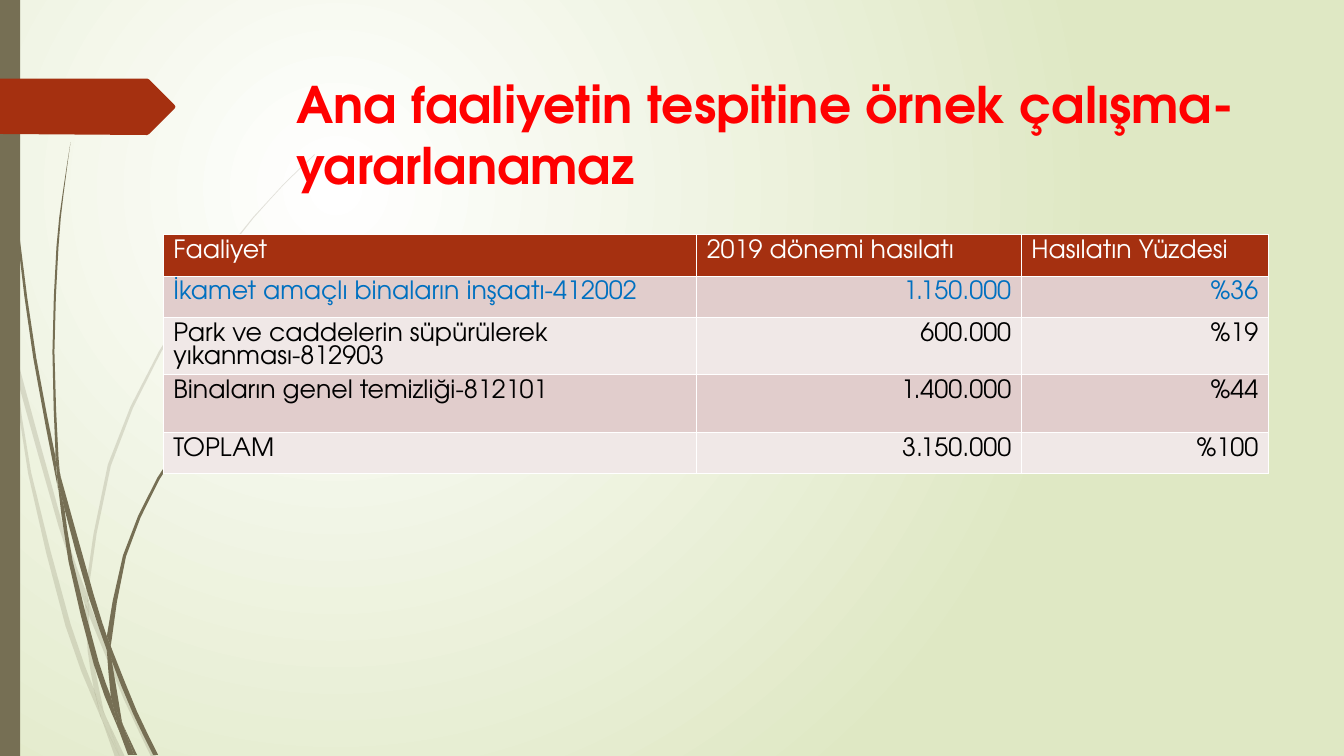
from lxml import etree
from pptx import Presentation
from pptx import util as u
from pptx.dml.color import RGBColor
from pptx.enum import shapes, text
from pptx.oxml.ns import qn

FONT = "TeX Gyre Adventor"
COLOURS = {
    "white": "FFFFFF", "meadow": "DFE8C4", "stem": "766F54", "rust": "A53010",
    "title": "FF0000", "blue": "0070C0", "black": "000000",
    "odd": "E1CDCC", "even": "F0E8E7",
}
COLUMNS = [5.29, 3.22, 2.45]
ROW_HEIGHTS = [0.41, 0.41, 0.57, 0.57, 0.41]
ROWS = [
    ["Faaliyet", "2019 dönemi hasılatı", "Hasılatın Yüzdesi"],
    ["İkamet amaçlı binaların inşaatı-412002", "1.150.000", "%36"],
    ["Park ve caddelerin süpürülerek yıkanması-812903", "600.000", "%19"],
    ["Binaların genel temizliği-812101", "1.400.000", "%44"],
    ["TOPLAM", "3.150.000", "%100"],
]
PALE_BLADES = [
    ([(0.11, 3.5), (0.09, 3.22), (0, 2.82)], [(0, 2.99), (0.1, 3.44), (0.11, 3.5)]),
    ([(0.14, 3.45), (0.62, 5.2), (0.85, 5.86)],
     [(0.84, 5.99), (0.58, 5.22), (0.17, 3.76)]),
    ([(0.88, 5.96), (0.92, 6.07), (1.27, 6.92), (1.55, 7.51)],
     [(1.5, 7.51), (1.23, 6.94), (0.88, 6.1)]),
    ([(1.05, 7.11), (1.24, 7.51)], [(1.19, 7.51), (1.05, 7.11)]),
    ([(0.11, 3.5), (0.17, 3.76), (0.31, 4.69), (0.7, 6.19), (0.93, 6.83),
      (0.99, 7.07), (1.01, 7.14)],
     [(0.92, 6.93), (0.65, 6.21), (0.28, 4.7), (0.11, 3.5)]),
    ([(0.84, 5.99), (0.87, 6.46), (0.93, 6.83), (0.96, 6.92), (1.05, 7.11)],
     [(1.03, 7.06), (0.91, 6.46), (0.88, 6.08), (0.84, 5.99)]),
    ([(0.88, 5.96), (0.88, 5.84), (1.1, 4.62), (1.6, 3.49), (2.29, 2.45),
      (2.68, 1.98), (2.9, 1.75), (3.12, 1.54)],
     [(3.12, 1.53), (2.89, 1.75), (2.68, 1.97), (2.28, 2.44), (1.58, 3.48),
      (1.07, 4.61), (0.85, 5.84)]),
    ([(1.01, 7.14), (1.14, 7.51)], [(1.19, 7.51), (1.01, 7.14)]),
    ([(0.88, 6.1), (0.88, 5.96), (0.85, 5.86)], [(0.84, 5.99), (0.88, 6.08)]),
    ([(0.93, 6.83), (0.99, 7.07), (1.01, 7.14), (1.19, 7.51)],
     [(1.19, 7.51), (1.05, 7.11), (0.96, 6.92), (0.93, 6.83)]),
]
DARK_BLADES = [
    ([(0.03, 0), (0.04, 0.48), (0.07, 1.1), (0.17, 2.33), (0.33, 3.55),
      (0.56, 4.77), (0.57, 4.81)],
     [(0.55, 4.53), (0.36, 3.55), (0.19, 2.32), (0.08, 1.09), (0.05, 0.48), (0.04, 0)]),
    ([(0.6, 4.72), (0.93, 5.9), (1.06, 6.31)],
     [(1.06, 6.45), (0.88, 5.92), (0.64, 5.05), (0.6, 4.72)]),
    ([(1.1, 6.41), (1.13, 6.49), (1.36, 7.06), (1.57, 7.49)],
     [(1.52, 7.49), (1.32, 7.08), (1.11, 6.56), (1.1, 6.41)]),
    ([(0.57, 4.77), (0.64, 5.05), (0.72, 5.56), (0.98, 6.57), (1.1, 6.91), (1.17, 7.22)],
     [(1.11, 7.08), (0.93, 6.59), (0.68, 5.57), (0.57, 4.77)]),
    ([(0.7, 1.41), (0.63, 1.93), (0.58, 2.45), (0.54, 3.49), (0.58, 4.53), (0.6, 4.72)],
     [(0.55, 4.49), (0.52, 3.49), (0.56, 2.45), (0.62, 1.93), (0.7, 1.41)]),
    ([(1.22, 7.19), (1.36, 7.49)], [(1.33, 7.49), (1.22, 7.19)]),
    ([(0.55, 4.49), (0.6, 4.72), (0.64, 5.05)], [(0.57, 4.77), (0.55, 4.53)]),
    ([(1.1, 6.41), (1.11, 6.33), (1.25, 5.52), (1.58, 4.76), (2.05, 4.06),
      (2.31, 3.74), (2.45, 3.59), (2.61, 3.44)],
     [(2.6, 3.44), (2.45, 3.58), (2.31, 3.73), (2.04, 4.05), (1.56, 4.74),
      (1.22, 5.51), (1.06, 6.31)]),
    ([(1.17, 7.22), (1.27, 7.49)], [(1.31, 7.49), (1.17, 7.22)]),
    ([(1.06, 6.45), (1.1, 6.91), (1.16, 7.06), (1.22, 7.19)],
     [(1.21, 7.16), (1.11, 6.56), (1.09, 6.51), (1.06, 6.45)]),
    ([(1.06, 6.31), (1.06, 6.45), (1.11, 6.56)], [(1.1, 6.41), (1.06, 6.31)]),
    ([(1.1, 6.91), (1.16, 7.17), (1.17, 7.22), (1.3, 7.49)],
     [(1.33, 7.49), (1.22, 7.19), (1.16, 7.06), (1.1, 6.91)]),
]
MARKER = [(0, 0.78), (1.46, 0.78), (1.48, 0.79), (1.73, 1.04), (1.74, 1.06),
          (1.73, 1.08), (1.48, 1.33), (1.46, 1.34), (0, 1.33)]


def rgb(name):
    return RGBColor.from_string(COLOURS[name])


def smooth(edge, steps=2):
    padded = [edge[0], *edge, edge[-1]]
    curve = [edge[0]]
    for before, start, end, after in zip(padded, padded[1:], padded[2:], padded[3:]):
        for step in range(1, steps + 1):
            t = step / steps
            curve.append(tuple(
                (2 * b + (c - a) * t + (2 * a - 5 * b + 4 * c - d) * t ** 2
                 + (3 * b - a - 3 * c + d) * t ** 3) / 2
                for a, b, c, d in zip(before, start, end, after)))
    return curve


def paint(figure, colour, alpha=None):
    figure.shadow.inherit = False
    figure.fill.solid()
    figure.fill.fore_color.rgb = rgb(colour)
    figure.line.fill.background()
    if alpha:
        tint = figure._element.spPr.find(".//" + qn("a:srgbClr"))
        etree.SubElement(tint, qn("a:alpha"), val=str(alpha * 1000))


def add_outline(slide, points, colour, alpha=None):
    start, *rest = [(u.Inches(x), u.Inches(y)) for x, y in points]
    builder = slide.shapes.build_freeform(*start)
    builder.add_line_segments(rest, close=True)
    paint(builder.convert_to_shape(), colour, alpha)


def add_background(slide):
    fill = slide.background.fill
    fill.gradient()
    for stop, colour in zip(fill.gradient_stops, ("white", "meadow")):
        stop.color.rgb = rgb(colour)
    gradient = slide._element.find(".//" + qn("a:gradFill"))
    gradient.remove(gradient.find(qn("a:lin")))
    circle = etree.SubElement(gradient, qn("a:path"), attrib={"path": "circle"})
    etree.SubElement(circle, qn("a:fillToRect"),
                     l="50000", t="50000", r="100000", b="100000")


def format_text(paragraph, size, colour, bold=False):
    for run in paragraph.runs:
        run.font.name = FONT
        run.font.size = u.Pt(size)
        run.font.bold = bold
        run.font.color.rgb = rgb(colour)


def add_title(slide, wording):
    title = slide.shapes.title
    slide.shapes._spTree.append(title._element)
    title.left, title.top = u.Inches(2.84), u.Inches(0.68)
    title.width, title.height = u.Inches(9.75), u.Inches(1.4)
    frame = title.text_frame
    frame.text = wording
    frame.word_wrap = True
    frame.vertical_anchor = text.MSO_ANCHOR.TOP
    heading = frame.paragraphs[0]
    heading.alignment = text.PP_ALIGN.LEFT
    format_text(heading, 36, "title", bold=True)


def add_borders(cell):
    properties = cell._tc.get_or_add_tcPr()
    for place, side in enumerate(("lnL", "lnR", "lnT", "lnB")):
        border = etree.Element(qn("a:" + side), w=str(u.Pt(1)))
        fill = etree.SubElement(border, qn("a:solidFill"))
        etree.SubElement(fill, qn("a:srgbClr"), val=COLOURS["white"])
        properties.insert(place, border)


def add_income_table(slide):
    table = slide.shapes.add_table(
        len(ROWS), len(COLUMNS), u.Inches(1.62), u.Inches(2.33),
        u.Inches(sum(COLUMNS)), u.Inches(sum(ROW_HEIGHTS))).table
    for column, width in zip(table.columns, COLUMNS):
        column.width = u.Inches(width)
    for r, (values, height) in enumerate(zip(ROWS, ROW_HEIGHTS)):
        table.rows[r].height = u.Inches(height)
        background = "rust" if r == 0 else "odd" if r % 2 else "even"
        ink = {0: "white", 1: "blue"}.get(r, "black")
        for c, value in enumerate(values):
            cell = table.cell(r, c)
            cell.fill.solid()
            cell.fill.fore_color.rgb = rgb(background)
            add_borders(cell)
            cell.text_frame.text = value
            entry = cell.text_frame.paragraphs[0]
            entry.alignment = text.PP_ALIGN.RIGHT if r and c else text.PP_ALIGN.LEFT
            format_text(entry, 18, ink)


def main():
    deck = Presentation()
    deck.slide_width, deck.slide_height = u.Inches(13.33), u.Inches(7.5)
    slide = deck.slides.add_slide(deck.slide_layouts[5])
    add_background(slide)
    for blades, alpha in ((PALE_BLADES, 20), (DARK_BLADES, None)):
        for outward, back in blades:
            add_outline(slide, smooth(outward) + smooth(back), "stem", alpha)
    paint(slide.shapes.add_shape(shapes.MSO_SHAPE.RECTANGLE, 0, 0,
                                 u.Inches(0.2), u.Inches(7.5)), "stem")
    add_outline(slide, MARKER, "rust")
    add_title(slide, "Ana faaliyetin tespitine örnek çalışma-yararlanamaz")
    add_income_table(slide)
    deck.save("out.pptx")


if __name__ == "__main__":
    main()
